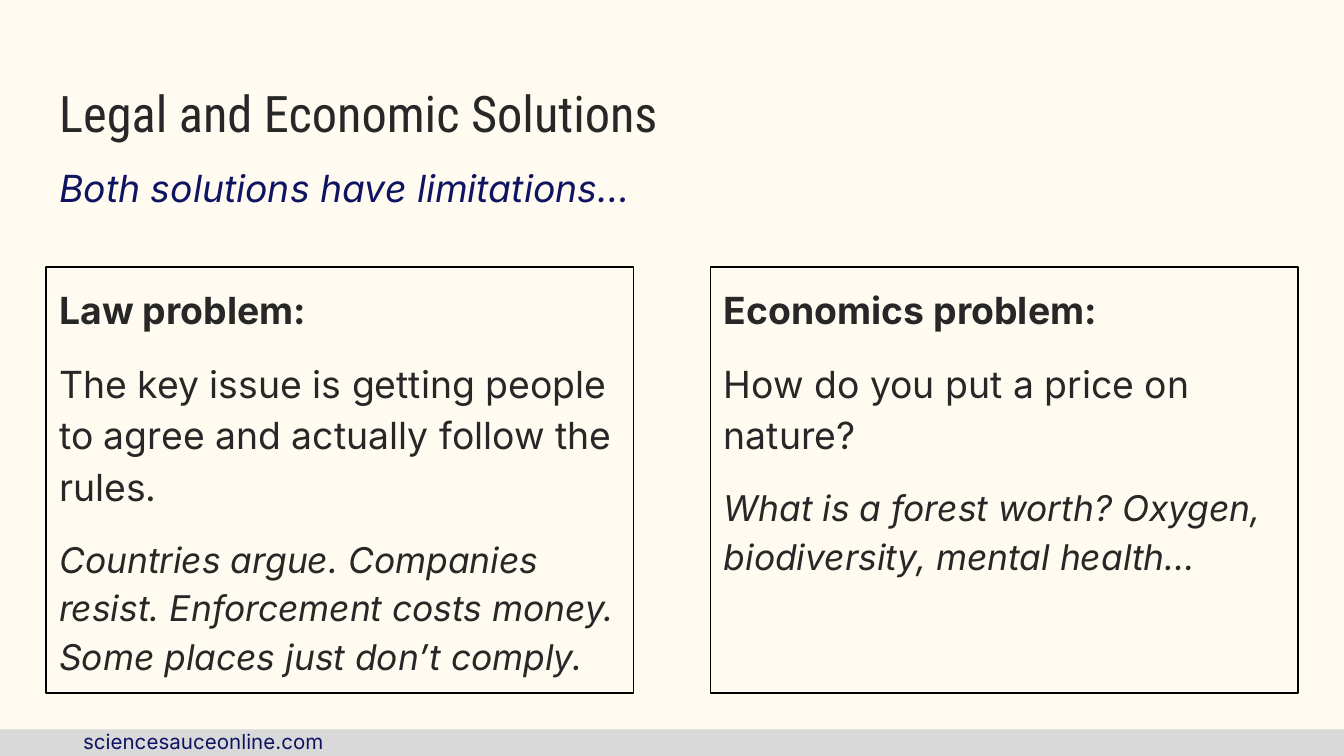
from pptx import Presentation
from pptx.dml.color import RGBColor
from pptx.enum.shapes import MSO_SHAPE
from pptx.enum.text import MSO_ANCHOR, PP_ALIGN
from pptx.util import Cm, Pt

CREAM = RGBColor(0xFF, 0xFB, 0xF0)
GREY = RGBColor(0xD9, 0xD9, 0xD9)
NAVY = RGBColor(0x0E, 0x13, 0x62)
INK = RGBColor(0x27, 0x27, 0x27)
BLACK = RGBColor(0, 0, 0)

PAGE_WIDTH, PAGE_HEIGHT = Cm(25.4), Cm(14.29)
MARGIN = Cm(0.87)
CONTENT_WIDTH = PAGE_WIDTH - 2 * MARGIN
COLUMN_WIDTH = Cm(11.1)

PROBLEMS = [
    ("Law problem:",
     "The key issue is getting people to agree and actually follow the rules.",
     "Countries argue. Companies resist. Enforcement costs money. "
     "Some places just don’t comply."),
    ("Economics problem:",
     "How do you put a price on nature?",
     "What is a forest worth? Oxygen, biodiversity, mental health…"),
]


def prepare_frame(shape, anchor=MSO_ANCHOR.TOP):
    frame = shape.text_frame
    frame.word_wrap = True
    frame.vertical_anchor = anchor
    frame.margin_left = frame.margin_right = Cm(0.25)
    frame.margin_top = frame.margin_bottom = Cm(0.25)
    return frame


def write(para, text, size=20, font="Inter", color=INK, bold=False,
          italic=False, spacing=1.0, before=0, after=0):
    para.alignment = PP_ALIGN.LEFT
    para.line_spacing = spacing
    para.space_before, para.space_after = Pt(before), Pt(after)
    span = para.add_run()
    span.text = text
    span.font.name, span.font.size = font, Pt(size)
    span.font.bold, span.font.italic = bold, italic
    span.font.color.rgb = color


def add_text(page, left, top, width, height, text, anchor=MSO_ANCHOR.TOP, **style):
    box = page.shapes.add_textbox(left, top, width, height)
    write(prepare_frame(box, anchor).paragraphs[0], text, **style)


def add_footer(page, left, top, width, height):
    band = page.shapes.add_shape(MSO_SHAPE.RECTANGLE, left, top, width, height)
    band.shadow.inherit = False
    band.fill.solid()
    band.fill.fore_color.rgb = GREY
    band.line.fill.background()
    add_text(page, left + Cm(1.32), top - Cm(0.23), Cm(8.48), Cm(0.46),
             "sciencesauceonline.com", size=11, color=NAVY)


def add_heading(page, left, top, width):
    title_height = Cm(1.7)
    add_text(page, left, top, width, title_height, "Legal and Economic Solutions",
             anchor=MSO_ANCHOR.BOTTOM, size=27, font="Roboto Condensed")
    add_text(page, left, top + title_height, width, Cm(1.96),
             "Both solutions have limitations…",
             color=NAVY, italic=True, spacing=0.95, after=12)


def add_problem(page, left, top, width, height, heading, issue, example):
    box = page.shapes.add_shape(MSO_SHAPE.RECTANGLE, left, top, width, height)
    box.shadow.inherit = False
    box.fill.background()
    box.line.color.rgb = BLACK
    box.line.width = Pt(0.75)
    frame = prepare_frame(box)
    write(frame.paragraphs[0], heading, bold=True, spacing=1.15)
    write(frame.add_paragraph(), issue, spacing=1.15, before=12)
    write(frame.add_paragraph(), example, size=19, italic=True,
          spacing=1.15, before=12, after=12)


def main():
    deck = Presentation()
    deck.slide_width, deck.slide_height = PAGE_WIDTH, PAGE_HEIGHT
    page = deck.slides.add_slide(deck.slide_layouts[6])
    page.background.fill.solid()
    page.background.fill.fore_color.rgb = CREAM

    # Footer band with the site address
    add_footer(page, 0, Cm(13.79), PAGE_WIDTH, Cm(0.5))

    # Title and subtitle
    add_heading(page, MARGIN, Cm(1.24), CONTENT_WIDTH)

    # Two columns, flush with the left and right margins
    step = CONTENT_WIDTH - COLUMN_WIDTH
    for column, problem in enumerate(PROBLEMS):
        add_problem(page, MARGIN + column * step, Cm(5.05),
                    COLUMN_WIDTH, Cm(8.05), *problem)

    deck.save("out.pptx")


if __name__ == "__main__":
    main()
